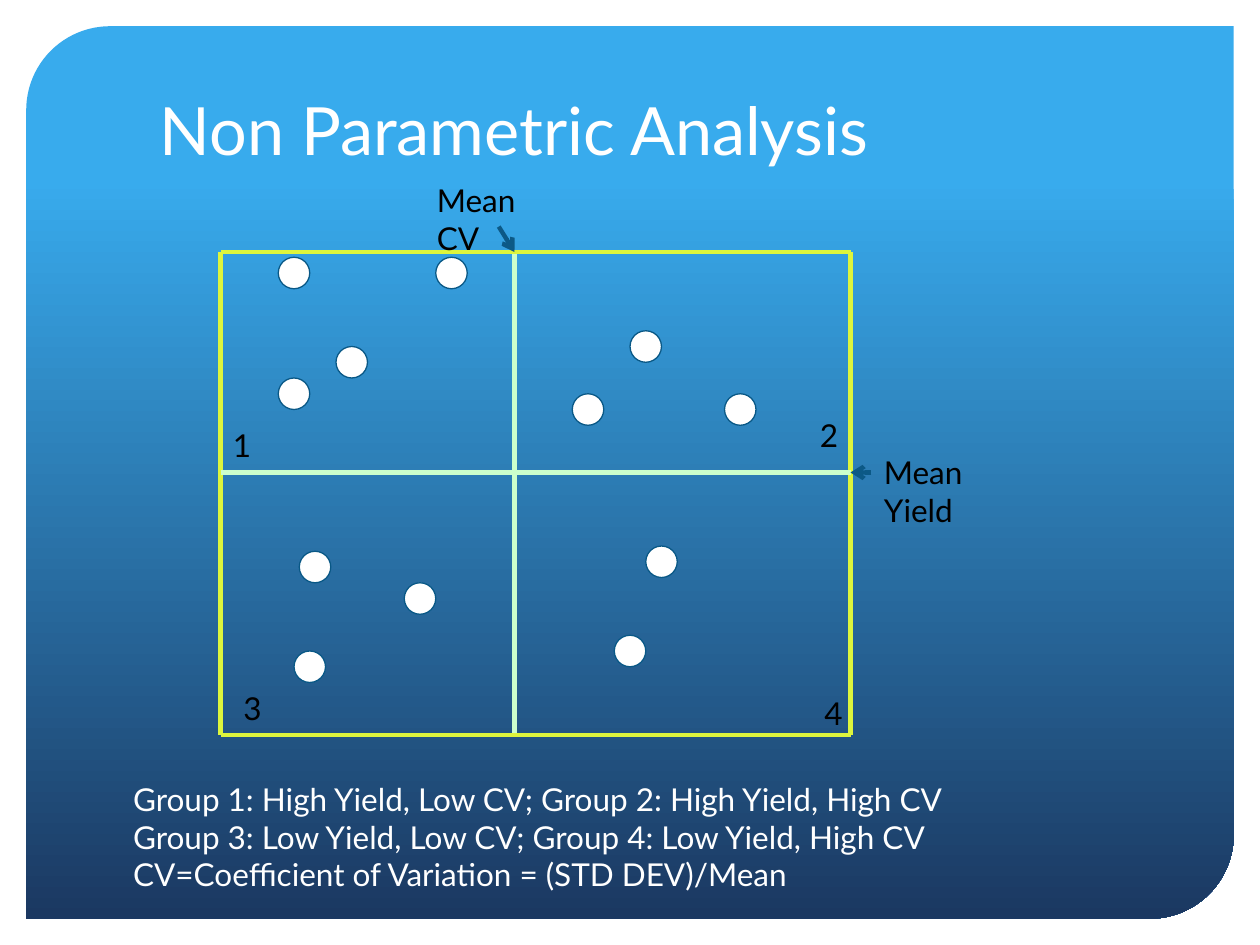
from dataclasses import dataclass

from lxml.etree import SubElement
from pptx import Presentation
from pptx.dml.color import RGBColor
from pptx.enum.shapes import MSO_CONNECTOR, MSO_SHAPE
from pptx.enum.text import MSO_ANCHOR, PP_ALIGN
from pptx.oxml.ns import qn
from pptx.util import Pt


@dataclass(frozen=True)
class Theme:
    font: str = "Lato"
    title_size: float = 38
    text_size: float = 18
    line_width: float = 2.5
    outline_width: float = 0.75
    light: str = "FFFFFF"
    dark: str = "000000"
    frame: str = "DDF53D"
    mean: str = "CCFFCC"
    arrow: str = "0C5986"
    outline: str = "095886"
    panel_top: str = "38ABED"
    panel_bottom: str = "1B3861"


class SlideBuilder:
    """Draws styled elements, measured in points, on one slide."""

    def __init__(self, slide, theme):
        self.slide = slide
        self.shapes = slide.shapes
        self.theme = theme

    def styled_run(self, paragraph, text, size, color):
        paragraph.alignment = PP_ALIGN.LEFT
        run = paragraph.add_run()
        run.text = text
        run.font.name = self.theme.font
        run.font.size = Pt(size)
        run.font.color.rgb = RGBColor.from_string(color)

    def panel(self, left, top, width, height):
        shape = self.shapes.add_shape(
            MSO_SHAPE.ROUND_2_DIAG_RECTANGLE, Pt(left), Pt(top), Pt(width), Pt(height))
        shape.shadow.inherit = False
        shape.adjustments[0] = 0.094
        shape.adjustments[1] = 0
        shape.line.fill.background()
        shape.fill.gradient()
        shape.fill.gradient_angle = 270
        colors = (self.theme.panel_top, self.theme.panel_bottom)
        for stop, position, color in zip(shape.fill.gradient_stops, (0.17, 1), colors):
            stop.position = position
            stop.color.rgb = RGBColor.from_string(color)
        return shape

    def title(self, text, left, top, width, height, panel):
        title = self.shapes.title
        panel.element.addnext(title.element)
        title.left, title.top = Pt(left), Pt(top)
        title.width, title.height = Pt(width), Pt(height)
        title.text_frame.vertical_anchor = MSO_ANCHOR.BOTTOM
        self.styled_run(title.text_frame.paragraphs[0], text,
                        self.theme.title_size, self.theme.light)

    def text(self, lines, left, top, width, height, color):
        frame = self.shapes.add_textbox(
            Pt(left), Pt(top), Pt(width), Pt(height)).text_frame
        frame.word_wrap = True
        for index, line in enumerate(lines):
            paragraph = frame.add_paragraph() if index else frame.paragraphs[0]
            self.styled_run(paragraph, line, self.theme.text_size, color)

    def line(self, start, end, color, arrow=False):
        connector = self.shapes.add_connector(
            MSO_CONNECTOR.STRAIGHT, *map(Pt, start), *map(Pt, end))
        connector.line.width = Pt(self.theme.line_width)
        connector.line.color.rgb = RGBColor.from_string(color)
        properties = connector.element.spPr
        if arrow:
            SubElement(properties.find(qn("a:ln")), qn("a:tailEnd"), type="arrow")
        SubElement(properties, qn("a:effectLst"))

    def dot(self, left, top, diameter=18):
        shape = self.shapes.add_shape(
            MSO_SHAPE.OVAL, Pt(left), Pt(top), Pt(diameter), Pt(diameter))
        shape.shadow.inherit = False
        shape.fill.solid()
        shape.fill.fore_color.rgb = RGBColor.from_string(self.theme.light)
        shape.line.width = Pt(self.theme.outline_width)
        shape.line.color.rgb = RGBColor.from_string(self.theme.outline)


def main():
    presentation = Presentation()
    presentation.slide_width, presentation.slide_height = Pt(720), Pt(540)
    slide = presentation.slides.add_slide(presentation.slide_layouts[5])
    theme = Theme()
    builder = SlideBuilder(slide, theme)

    panel = builder.panel(15, 15, 690, 510)
    builder.title("Non Parametric Analysis", 84, 18, 597, 82, panel)

    left, mean_cv, right = 126, 294, 486
    top, mean_yield, bottom = 144, 270, 420
    for x, color in ((left, theme.frame), (right, theme.frame), (mean_cv, theme.mean)):
        builder.line((x, top), (x, bottom), color)
    for y, color in ((top, theme.frame), (bottom, theme.frame), (mean_yield, theme.mean)):
        builder.line((left, y), (right, y), color)

    builder.text(["Mean CV"], 242.5, 100, 68, 50, theme.dark)
    builder.text(["Mean Yield"], 498, 255.5, 76, 50, theme.dark)

    dots = (
        (159, 147), (249, 147), (192, 198), (159, 216),
        (360, 189), (327, 225), (414, 225),
        (171, 315), (231, 333), (168, 372),
        (369, 312), (351, 363),
    )
    for position in dots:
        builder.dot(*position)

    builder.line((285, 129.5), (mean_cv, top), theme.arrow, arrow=True)
    builder.line((498, mean_yield), (right, mean_yield), theme.arrow, arrow=True)

    corners = ((126, 240), (461.5, 234), (132, 390), (464, 393))
    for number, (x, y) in enumerate(corners, 1):
        builder.text([str(number)], x, y, 25, 29, theme.dark)

    builder.text([
        "Group 1: High Yield, Low CV; Group 2: High Yield, High CV",
        "Group 3: Low Yield, Low CV; Group 4: Low Yield, High CV",
        "CV=Coefficient of Variation = (STD DEV)/Mean",
    ], 69, 442, 488, 73, theme.light)

    presentation.save("out.pptx")


if __name__ == "__main__":
    main()
